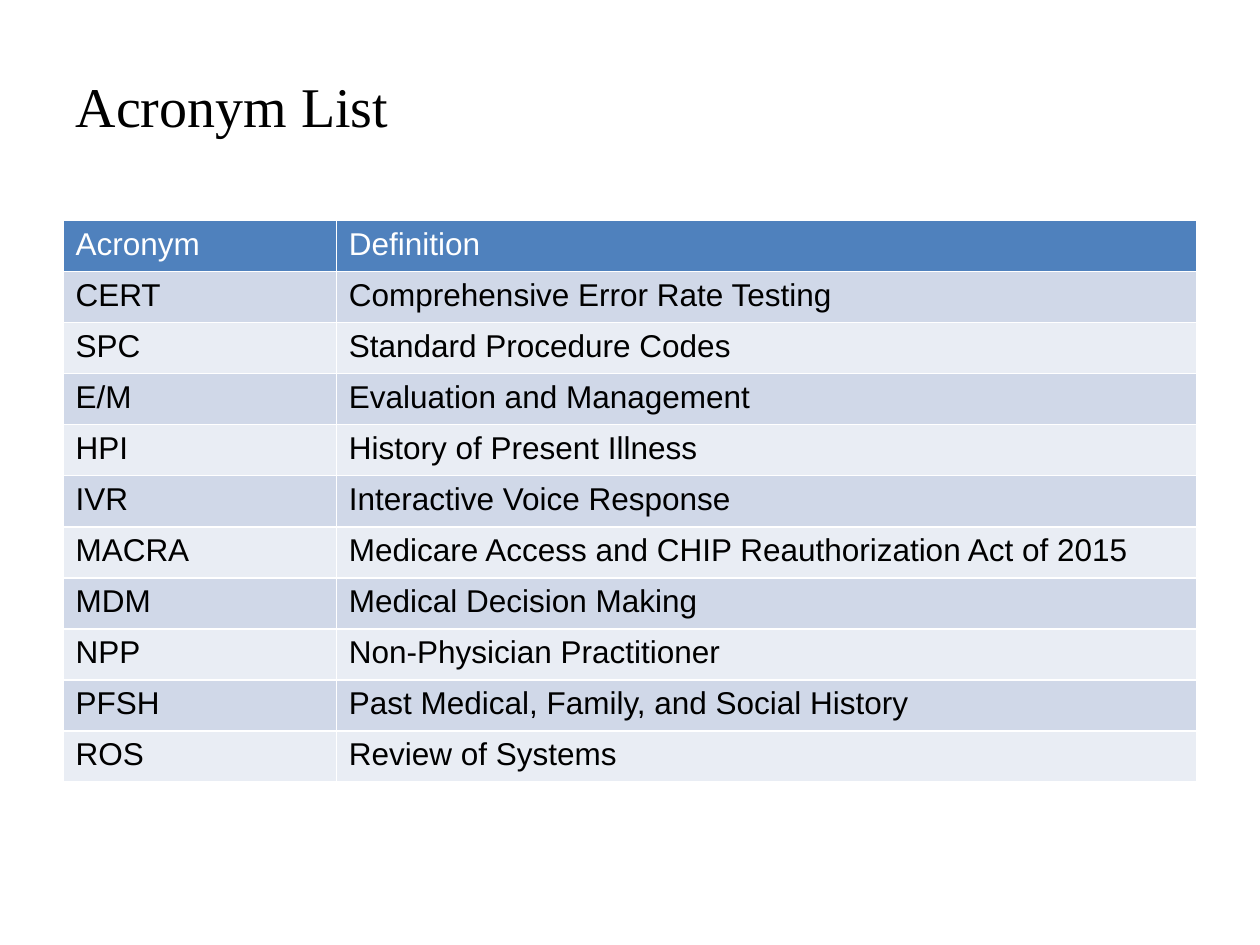
from pptx import Presentation
from pptx.dml.color import RGBColor
from pptx.enum.text import MSO_ANCHOR, PP_ALIGN
from pptx.util import Inches, Pt

LEFT = PP_ALIGN.LEFT
MIDDLE = MSO_ANCHOR.MIDDLE
TITLE_ONLY = 5

BLACK = RGBColor(0x00, 0x00, 0x00)
WHITE = RGBColor(0xFF, 0xFF, 0xFF)
HEADER_BLUE = RGBColor(0x4F, 0x81, 0xBD)
BAND_COLORS = (RGBColor(0xE9, 0xED, 0xF4), RGBColor(0xD0, 0xD8, 0xE8))

ROWS = [
    ("Acronym", "Definition"),
    ("CERT", "Comprehensive Error Rate Testing"),
    ("SPC", "Standard Procedure Codes"),
    ("E/M", "Evaluation and Management"),
    ("HPI", "History of Present Illness"),
    ("IVR", "Interactive Voice Response"),
    ("MACRA", "Medicare Access and CHIP Reauthorization Act of 2015"),
    ("MDM", "Medical Decision Making"),
    ("NPP", "Non-Physician Practitioner"),
    ("PFSH", "Past Medical, Family, and Social History"),
    ("ROS", "Review of Systems"),
]


def format_text(paragraph, color, **font_values):
    paragraph.alignment = LEFT
    for name, value in font_values.items():
        setattr(paragraph.font, name, value)
    paragraph.font.color.rgb = color


presentation = Presentation()
presentation.slide_width = Inches(10)
presentation.slide_height = Inches(7.5)
slide = presentation.slides.add_slide(presentation.slide_layouts[TITLE_ONLY])

margin = presentation.slide_width // 20
content_width = presentation.slide_width - 2 * margin

title = slide.shapes.title
title.left, title.top = margin, Inches(0.25)
title.width, title.height = presentation.slide_width * 2 // 3, Inches(1.17)
title.text_frame.text = "Acronym List"
title.text_frame.vertical_anchor = MIDDLE
format_text(title.text_frame.paragraphs[0], BLACK,
            name="Times New Roman", size=Pt(32))

# The default table style supplies the white cell borders.
row_height = Inches(4.46) // len(ROWS)
table = slide.shapes.add_table(
    len(ROWS), 2, margin, Inches(1.75), content_width, row_height * len(ROWS)
).table
table.columns[0].width = Inches(2.17)
table.columns[1].width = content_width - Inches(2.17)

for row_index, texts in enumerate(ROWS):
    is_header = row_index == 0
    for column_index, text in enumerate(texts):
        cell = table.cell(row_index, column_index)
        cell.text = text
        cell.fill.solid()
        cell.fill.fore_color.rgb = HEADER_BLUE if is_header else BAND_COLORS[row_index % 2]
        format_text(cell.text_frame.paragraphs[0], WHITE if is_header else BLACK,
                    name="Arial", size=Pt(18), bold=False)

presentation.save("out.pptx")
